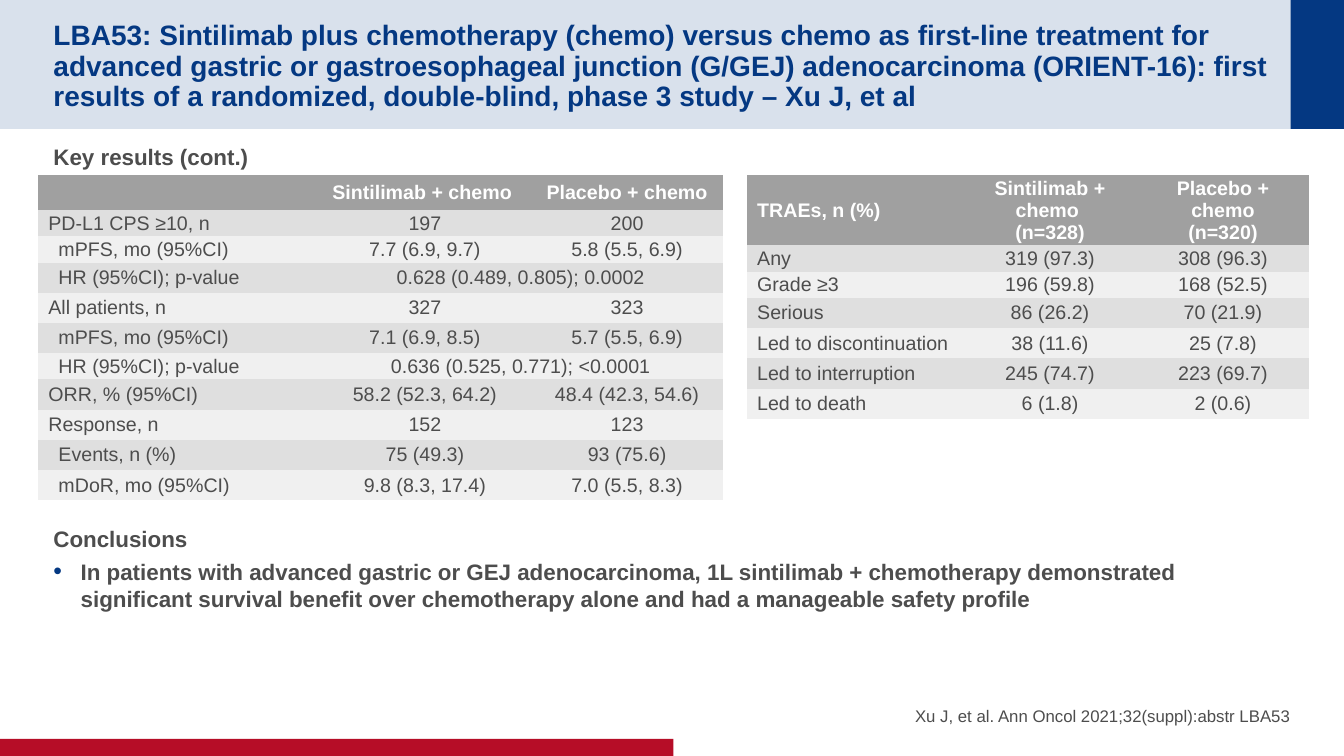
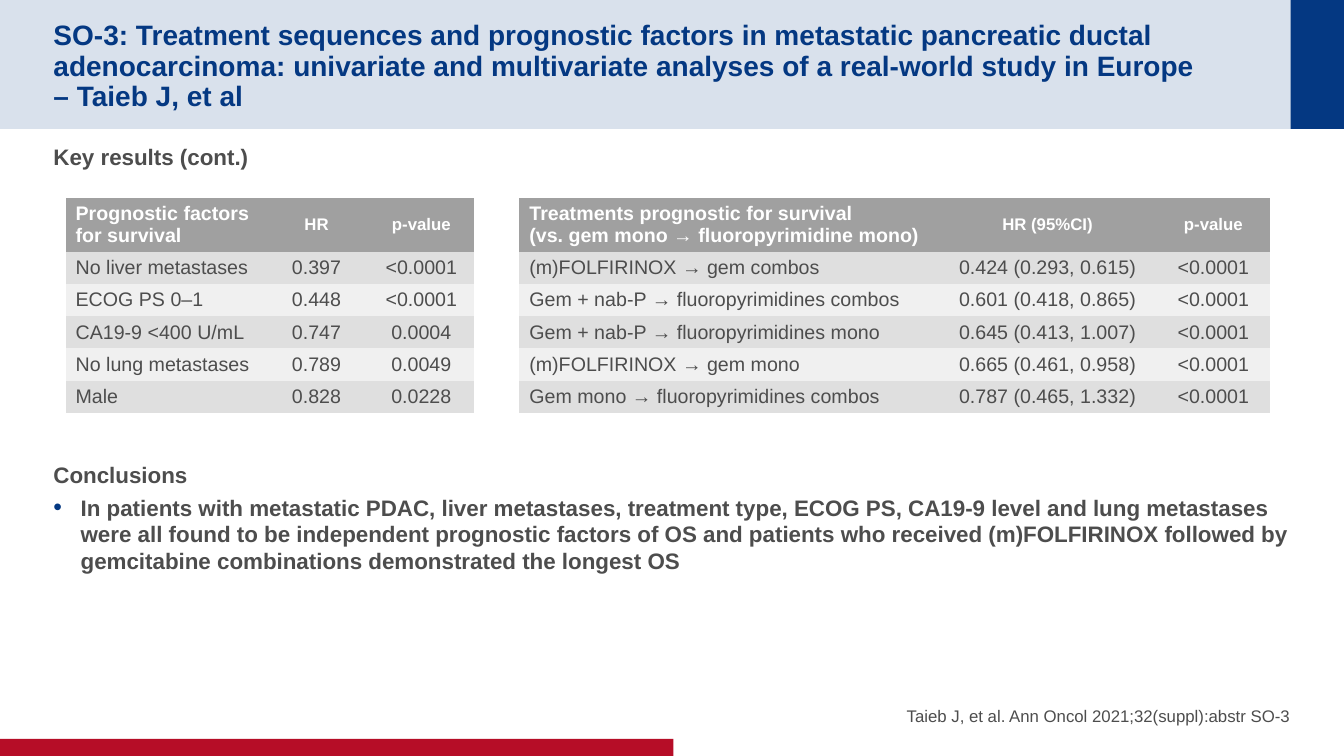
from dataclasses import dataclass

from lxml import etree
from pptx import Presentation
from pptx import util as u
from pptx.dml.color import RGBColor
from pptx.enum import shapes, text
from pptx.oxml import ns


@dataclass(frozen=True)
class Theme:
    font: str = "Arial"
    navy: str = "043882"
    red: str = "B60D27"
    ink: str = "4D4D4D"
    white: str = "FFFFFF"
    header: str = "A0A0A0"
    stripes: tuple = ("DFDFDF", "F0F0F0")
    title_size: int = 20
    body_size: int = 16
    table_size: int = 14
    small_size: int = 12


theme = Theme()
LEFT, CENTER, RIGHT = text.PP_ALIGN.LEFT, text.PP_ALIGN.CENTER, text.PP_ALIGN.RIGHT
MIDDLE = text.MSO_ANCHOR.MIDDLE
NO_GRID = "{2D5ABB26-0587-4C30-8999-92F81FD0307C}"


def write(p, words, size, color, bold=False, align=LEFT):
    p.alignment = align
    for i, line in enumerate(words.split("\n")):
        if i:
            p.add_line_break()
        r = p.add_run()
        r.text = line
        r.font.name = theme.font
        r.font.size = u.Pt(size)
        r.font.bold = bold
        r.font.color.rgb = RGBColor.from_string(color)


def place(sp, box, anchor, top_inset, bottom_inset):
    sp.left, sp.top, sp.width, sp.height = [u.Inches(v) for v in box]
    tf = sp.text_frame
    tf.word_wrap = True
    tf.auto_size = text.MSO_AUTO_SIZE.NONE
    tf.vertical_anchor = anchor
    tf.margin_left = tf.margin_right = 0
    tf.margin_top, tf.margin_bottom = u.Inches(top_inset), u.Inches(bottom_inset)
    return tf


SLIDES = [
    {
        "title": "LBA53: Sintilimab plus chemotherapy (chemo) versus chemo as first-line treatment for advanced gastric or gastroesophageal junction (G/GEJ) adenocarcinoma (ORIENT-16): first results of a randomized, double-blind, phase 3 study – Xu J, et al",
        "title_width": 12.27,
        "gap": 250,
        "conclusion": "In patients with advanced gastric or GEJ adenocarcinoma, 1L sintilimab + chemotherapy demonstrated significant survival benefit over chemotherapy alone and had a manageable safety profile",
        "source": "Xu J, et al. Ann Oncol 2021;32(suppl):abstr LBA53",
        "top": 1.74,
        "inset": 0.02,
        "head_size": theme.table_size,
        "tables": [
            {
                "left": 0.38,
                "cols": [2.78, 2.11, 1.9],
                "heights": [0.3, 0.26, 0.26, 0.3, 0.3, 0.3, 0.26, 0.3, 0.3, 0.3, 0.3],
                "indented": {2, 3, 5, 6, 9, 10},
                "rows": [
                    ["", "Sintilimab + chemo ", "Placebo + chemo"],
                    ["PD-L1 CPS ≥10, n", "197", "200"],
                    ["mPFS, mo (95%CI)", "7.7 (6.9, 9.7)", "5.8 (5.5, 6.9)"],
                    ["HR (95%CI); p-value", "0.628 (0.489, 0.805); 0.0002"],
                    ["All patients, n", "327", "323"],
                    ["mPFS, mo (95%CI)", "7.1 (6.9, 8.5)", "5.7 (5.5, 6.9)"],
                    ["HR (95%CI); p-value", "0.636 (0.525, 0.771); <0.0001"],
                    ["ORR, % (95%CI)", "58.2 (52.3, 64.2)", "48.4 (42.3, 54.6)"],
                    ["Response, n", "152", "123"],
                    ["Events, n (%)", "75 (49.3)", "93 (75.6)"],
                    ["mDoR, mo (95%CI)", "9.8 (8.3, 17.4)", "7.0 (5.5, 8.3)"],
                ],
            },
            {
                "left": 7.41,
                "cols": [2.14, 1.73, 1.7],
                "heights": [0.69, 0.26, 0.26, 0.3, 0.3, 0.3, 0.3],
                "rows": [
                    ["TRAEs, n (%)", "Sintilimab + chemo \n(n=328)", "Placebo + chemo\n(n=320)"],
                    ["Any", "319 (97.3)", "308 (96.3)"],
                    ["Grade ≥3", "196 (59.8)", "168 (52.5)"],
                    ["Serious", "86 (26.2)", "70 (21.9)"],
                    ["Led to discontinuation", "38 (11.6)", "25 (7.8)"],
                    ["Led to interruption", "245 (74.7)", "223 (69.7)"],
                    ["Led to death", "6 (1.8)", "2 (0.6)"],
                ],
            },
        ],
    },
    {
        "title": "SO-3: Treatment sequences and prognostic factors in metastatic pancreatic ductal adenocarcinoma: univariate and multivariate analyses of a real-world study in Europe \n– Taieb J, et al",
        "title_width": 12.08,
        "gap": 204,
        "conclusion": "In patients with metastatic PDAC, liver metastases, treatment type, ECOG PS, CA19-9 level and lung metastases were all found to be independent prognostic factors of OS and patients who received (m)FOLFIRINOX followed by gemcitabine combinations demonstrated the longest OS",
        "source": "Taieb J, et al. Ann Oncol 2021;32(suppl):abstr SO-3",
        "top": 1.96,
        "inset": 0.05,
        "head_size": theme.small_size,
        "tables": [
            {
                "left": 0.65,
                "cols": [1.97, 1.04, 1.04],
                "heights": [0.53] + [0.32] * 5,
                "rows": [
                    ["Prognostic factors for survival", "HR", "p-value"],
                    ["No liver metastases", "0.397", "<0.0001"],
                    ["ECOG PS 0–1", "0.448", "<0.0001"],
                    ["CA19-9 <400 U/mL", "0.747", "0.0004"],
                    ["No lung metastases", "0.789", "0.0049"],
                    ["Male", "0.828", "0.0228"],
                ],
            },
            {
                "left": 5.15,
                "cols": [4.16, 2.16, 1.13],
                "heights": [0.53] + [0.32] * 5,
                "rows": [
                    ["Treatments prognostic for survival \n(vs. gem mono → fluoropyrimidine mono)", "HR (95%CI)", "p-value"],
                    ["(m)FOLFIRINOX → gem combos", "0.424 (0.293, 0.615)", "<0.0001"],
                    ["Gem + nab-P → fluoropyrimidines combos", "0.601 (0.418, 0.865)", "<0.0001"],
                    ["Gem + nab-P → fluoropyrimidines mono", "0.645 (0.413, 1.007)", "<0.0001"],
                    ["(m)FOLFIRINOX → gem mono", "0.665 (0.461, 0.958)", "<0.0001"],
                    ["Gem mono → fluoropyrimidines combos", "0.787 (0.465, 1.332)", "<0.0001"],
                ],
            },
        ],
    },
]

prs = Presentation()
prs.slide_width, prs.slide_height = u.Inches(13.33), u.Inches(7.5)
layout = prs.slide_layouts[3]

for number, content in enumerate(SLIDES):
    s = prs.slides.add_slide(layout)

    if number == 0:
        bands = [
            ((0, 0, 13.33, 1.28), theme.navy, 15),
            ((12.8, 0, 0.53, 1.28), theme.navy, 100),
            ((0, 7.33, 6.68, 0.17), theme.red, 100),
        ]
        for position, (box, color, opacity) in enumerate(bands):
            sp = s.shapes.add_shape(shapes.MSO_SHAPE.RECTANGLE, *[u.Inches(v) for v in box])
            sp.shadow.inherit = False
            sp.line.fill.background()
            sp.fill.solid()
            sp.fill.fore_color.rgb = RGBColor.from_string(color)
            if opacity < 100:
                clr = sp.element.spPr.find(".//" + ns.qn("a:srgbClr"))
                etree.SubElement(clr, ns.qn("a:alpha"), val=str(opacity * 1000))
            layout.shapes.element.insert(2 + position, sp.element)

    title, body, citation = s.placeholders

    tf = place(title, (0.53, 0.2, content["title_width"], 0.88), MIDDLE, 0.05, 0)
    p = tf.paragraphs[0]
    p.line_spacing = 0.9
    write(p, content["title"], theme.title_size, theme.navy, True)

    tf = place(body, (0.53, 1.37, 12.27, 5.19), text.MSO_ANCHOR.TOP, 0.05, 0.05)
    paragraphs = [
        ("Key results (cont.)", 0, False),
        ("Conclusions", content["gap"], False),
        (content["conclusion"], 0, True),
    ]
    for i, (words, before, bulleted) in enumerate(paragraphs):
        p = tf.add_paragraph() if i else tf.paragraphs[0]
        p.space_before, p.space_after = u.Pt(before), u.Pt(4)
        write(p, words, theme.body_size, theme.ink, True)
        pPr = p._p.get_or_add_pPr()
        hang = u.Inches(0.27) if bulleted else 0
        pPr.set("marL", str(hang))
        pPr.set("indent", str(-hang))
        if bulleted:
            clr = etree.SubElement(pPr, ns.qn("a:buClr"))
            etree.SubElement(clr, ns.qn("a:srgbClr"), val=theme.navy)
            etree.SubElement(pPr, ns.qn("a:buSzPct"), val="110000")
            etree.SubElement(pPr, ns.qn("a:buFont"), typeface=theme.font)
            etree.SubElement(pPr, ns.qn("a:buChar"), char="•")
        else:
            etree.SubElement(pPr, ns.qn("a:buNone"))

    tf = place(citation, (6.78, 6.67, 6.02, 0.53), text.MSO_ANCHOR.BOTTOM, 0, 0)
    p = tf.paragraphs[0]
    p.space_before, p.space_after = u.Pt(0), u.Pt(4)
    write(p, content["source"], theme.small_size, theme.ink, align=RIGHT)
    pPr = p._p.get_or_add_pPr()
    pPr.set("marL", "0")
    pPr.set("indent", "0")
    etree.SubElement(pPr, ns.qn("a:buNone"))

    for spec_table in content["tables"]:
        rows, cols, heights = spec_table["rows"], spec_table["cols"], spec_table["heights"]
        box = (spec_table["left"], content["top"], sum(cols), sum(heights))
        table = s.shapes.add_table(len(rows), len(cols), *[u.Inches(v) for v in box]).table
        table.first_row = table.horz_banding = False
        table._tbl.tblPr.find(ns.qn("a:tableStyleId")).text = NO_GRID
        for column, width in zip(table.columns, cols):
            column.width = u.Inches(width)
        for i, (values, height) in enumerate(zip(rows, heights)):
            table.rows[i].height = u.Inches(height)
            fill = theme.stripes[(i - 1) % 2] if i else theme.header
            for cell in table.rows[i].cells:
                cell.fill.solid()
                cell.fill.fore_color.rgb = RGBColor.from_string(fill)
                cell.vertical_anchor = MIDDLE
                cell.margin_left = cell.margin_right = u.Inches(0.1)
                cell.margin_top = cell.margin_bottom = u.Inches(content["inset"])
            if len(values) < len(cols):
                table.cell(i, 1).merge(table.cell(i, len(cols) - 1))
            for j, value in enumerate(values):
                if not value:
                    continue
                p = table.cell(i, j).text_frame.paragraphs[0]
                size = content["head_size"] if i == 0 and j else theme.table_size
                color = theme.ink if i else theme.white
                write(p, value, size, color, i == 0, CENTER if j else LEFT)
                if j == 0 and i in spec_table.get("indented", ()):
                    p._p.get_or_add_pPr().set("marL", str(u.Inches(0.1)))

prs.save("out.pptx")
